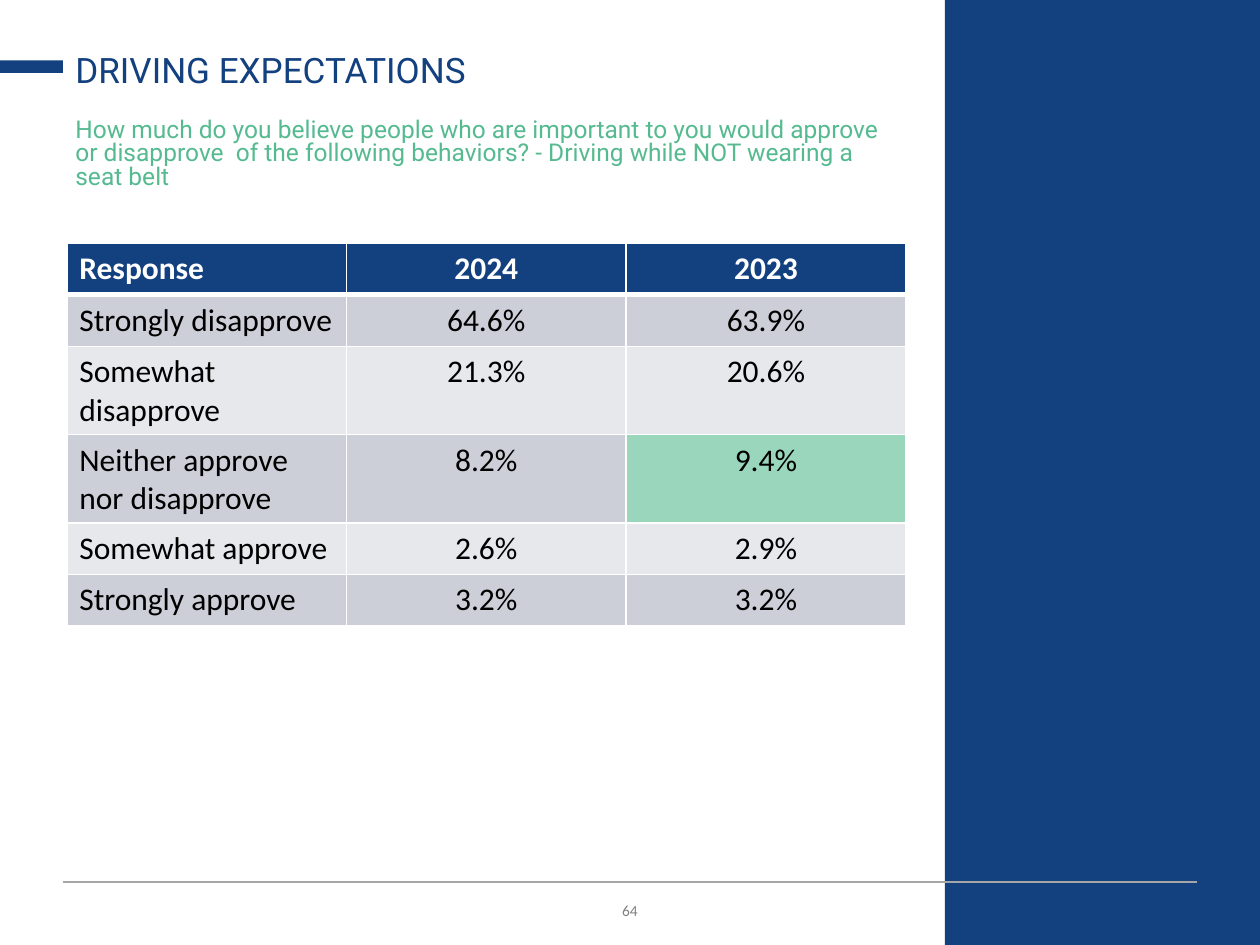
from dataclasses import dataclass

from lxml import etree
from pptx import Presentation
from pptx import util as u
from pptx.dml import color
from pptx.enum import shapes, text
from pptx.oxml import ns


@dataclass(frozen=True)
class Theme:
    navy: str = "13407E"
    green: str = "55BA8F"
    highlight: str = "99D6BC"
    bands: tuple = ("CCCFD8", "E7E8EC")
    white: str = "FFFFFF"
    black: str = "000000"
    rule: str = "A6A6A6"
    muted: str = "808080"
    heading_font: str = "Roboto"
    body_font: str = "Calibri"
    title_size: int = 20
    question_size: int = 14
    table_size: int = 18
    footer_size: int = 11


THEME = Theme()
HEADER = ("Response", "2024", "2023")
RESPONSES = (
    ("Strongly disapprove", "64.6%", "63.9%"),
    ("Somewhat disapprove", "21.3%", "20.6%"),
    ("Neither approve nor disapprove", "8.2%", "9.4%"),
    ("Somewhat approve", "2.6%", "2.9%"),
    ("Strongly approve", "3.2%", "3.2%"),
)
HIGHLIGHTED = (3, 2)
QUESTION = (
    "How much do you believe people who are important to you would approve "
    "or disapprove  of the following behaviors? - Driving while NOT wearing a seat belt"
)


def rgb(value):
    return color.RGBColor.from_string(value)


def write(frame, words, *, font, size, ink, bold=False, align=text.PP_ALIGN.LEFT,
          spacing=None, small_caps=False):
    paragraph = frame.paragraphs[0]
    paragraph.alignment = align
    if spacing:
        paragraph.line_spacing = spacing
    run = paragraph.add_run()
    run.text = words
    run.font.name = font
    run.font.size = u.Pt(size)
    run.font.bold = bold
    run.font.color.rgb = rgb(ink)
    if small_caps:
        run._r.get_or_add_rPr().set("cap", "small")


def add_text(slide, box, words, *, anchor=text.MSO_ANCHOR.TOP, **style):
    frame = slide.shapes.add_textbox(*map(u.Inches, box)).text_frame
    frame.word_wrap = True
    frame.vertical_anchor = anchor
    write(frame, words, **style)


def add_block(slide, box):
    shape = slide.shapes.add_shape(shapes.MSO_SHAPE.RECTANGLE, *map(u.Inches, box))
    shape.shadow.inherit = False
    shape.fill.solid()
    shape.fill.fore_color.rgb = rgb(THEME.navy)
    shape.line.fill.background()


def add_footer(slide, box):
    left, top, width, height = box
    line = slide.shapes.add_connector(
        shapes.MSO_CONNECTOR.STRAIGHT,
        *map(u.Inches, (left, top, left + width, top)))
    line.line.color.rgb = rgb(THEME.rule)
    line.line.width = u.Pt(0.75)
    etree.SubElement(line._element.spPr, ns.qn("a:effectLst"))
    add_text(slide, (left, top + 0.06, width, height - 0.06), "64",
             anchor=text.MSO_ANCHOR.MIDDLE, align=text.PP_ALIGN.CENTER,
             font=THEME.body_font, size=THEME.footer_size, ink=THEME.muted,
             small_caps=True)


def add_heading(slide, box):
    left, top, width, height = box
    add_block(slide, (0, top + 0.19, left, 0.1))
    add_text(slide, (left, top + 0.61, width, height - 0.61), QUESTION,
             font=THEME.heading_font, size=THEME.question_size,
             ink=THEME.green, spacing=0.8)
    add_text(slide, (left, top, width, 0.48), "DRIVING EXPECTATIONS",
             anchor=text.MSO_ANCHOR.BOTTOM, font=THEME.heading_font,
             size=THEME.title_size, ink=THEME.navy, spacing=0.9)


def set_borders(cell, **widths):
    properties = cell._tc.get_or_add_tcPr()
    for index, side in enumerate(("L", "R", "T", "B")):
        line = etree.Element(ns.qn(f"a:ln{side}"), w=str(u.Pt(widths.get(side, 1))))
        fill = etree.SubElement(line, ns.qn("a:solidFill"))
        etree.SubElement(fill, ns.qn("a:srgbClr"), val=THEME.white)
        properties.insert(index, line)


def cell_fill(row, column):
    if row == 0:
        return THEME.navy
    if (row, column) == HIGHLIGHTED:
        return THEME.highlight
    return THEME.bands[(row - 1) % 2]


def add_responses(slide, box, row_height=0.41):
    rows = (HEADER, *RESPONSES)
    table = slide.shapes.add_table(len(rows), len(HEADER), *map(u.Inches, box)).table
    for column in table.columns:
        column.width = u.Inches(box[2] / len(HEADER))
    for row_index, values in enumerate(rows):
        is_header = row_index == 0
        table.rows[row_index].height = u.Inches(row_height)
        for column_index, value in enumerate(values):
            cell = table.cell(row_index, column_index)
            cell.fill.solid()
            cell.fill.fore_color.rgb = rgb(cell_fill(row_index, column_index))
            set_borders(cell, B=3 if is_header else 1, T=3 if row_index == 1 else 1)
            write(cell.text_frame, value, font=THEME.body_font,
                  size=THEME.table_size, bold=is_header,
                  ink=THEME.white if is_header else THEME.black,
                  align=text.PP_ALIGN.CENTER if column_index else text.PP_ALIGN.LEFT)


def main():
    presentation = Presentation()
    presentation.slide_width = u.Inches(10)
    presentation.slide_height = u.Inches(7.5)
    slide = presentation.slides.add_slide(presentation.slide_layouts[6])
    add_block(slide, (7.5, 0, 2.5, 7.5))
    add_footer(slide, (0.5, 7, 9, 0.36))
    add_heading(slide, (0.5, 0.29, 6.7, 1.28))
    add_responses(slide, (0.53, 1.93, 6.66, 2.46))
    presentation.save("out.pptx")


if __name__ == "__main__":
    main()
